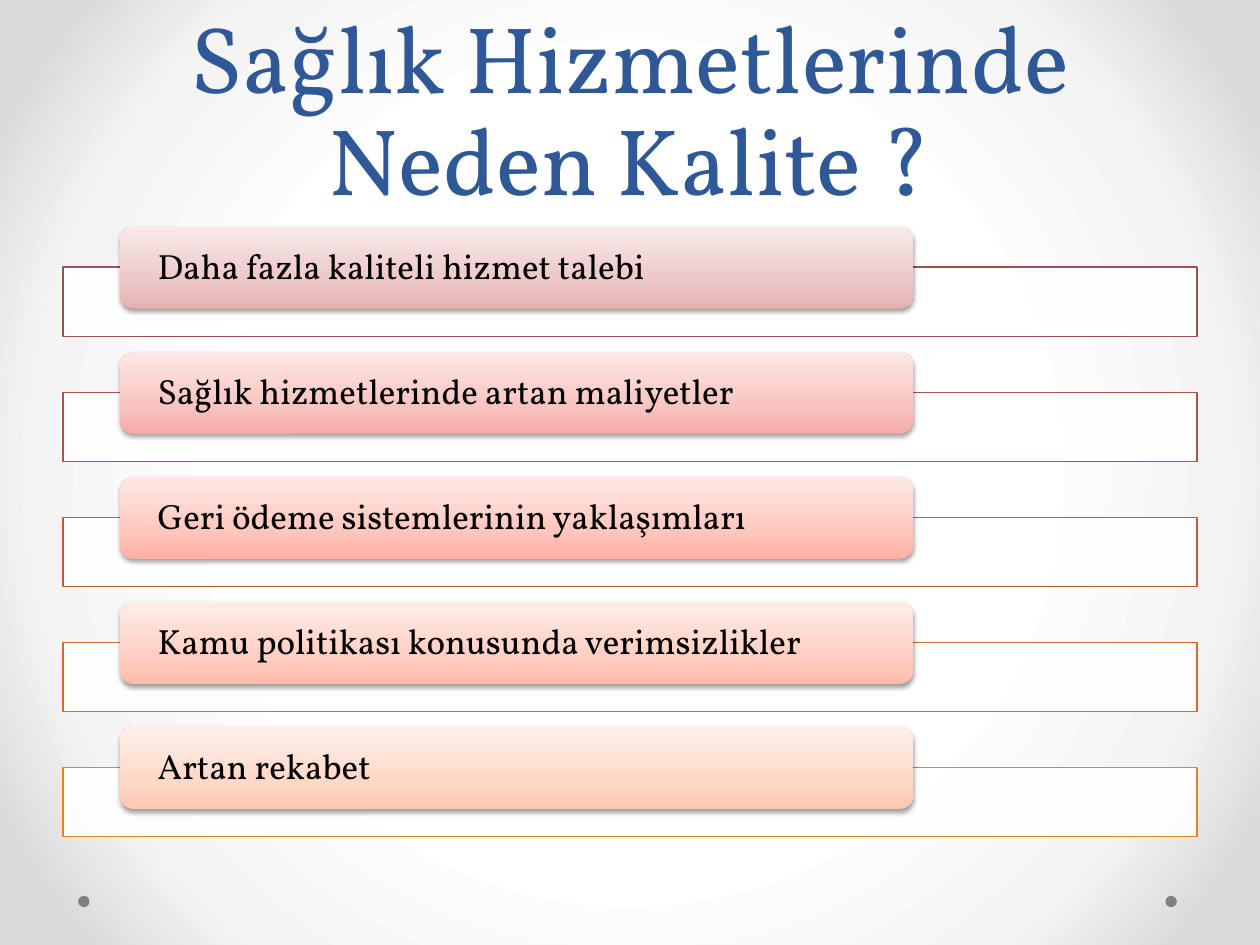
from dataclasses import dataclass

from lxml import etree
from pptx import Presentation
from pptx.dml.color import RGBColor
from pptx.enum import shapes, text
from pptx.oxml.ns import qn
from pptx.util import Inches, Pt

FONT = "Vollkorn"
COLORS = {
    "title": "2F5897",
    "body": "000000",
    "panel": "FFFFFF",
    "dot": "808080",
    "shadow": "000000",
}
BACKGROUND = [(50, "FFFFFF"), (76, "F4F4F4"), (92, "DADADA")]
TOP, PITCH = 1.8, 3.97 / 4


@dataclass
class Reason:
    label: str
    line: str
    gradient: tuple[str, str, str]


REASONS = [
    Reason("Daha fazla kaliteli hizmet talebi", "9C5252", ("E8B0B0", "EDC8C8", "F9E9E9")),
    Reason("Sağlık hizmetlerinde artan maliyetler", "AF5345", ("F7ABA6", "F8C5C1", "FDE8E6")),
    Reason("Geri ödeme sistemlerinin yaklaşımları", "C35B38", ("FFB0A4", "FFC7BE", "FFE9E6")),
    Reason("Kamu politikası konusunda verimsizlikler", "D66B2B", ("FFBCAB", "FFCFC3", "FFEDE8")),
    Reason("Artan rekabet", "E68422", ("FFC9B1", "FFD8C8", "FFF0EA")),
]


def rgb(value: str) -> RGBColor:
    return RGBColor.from_string(value)


def add(parent, tag: str, **attrs):
    return etree.SubElement(parent, qn(tag), {k: str(v) for k, v in attrs.items()})


def set_gradient(fill, owner, stops: list[tuple[int, str]], angle: int | None = None) -> None:
    """Linear gradient at an angle in degrees, or circular from the centre."""
    fill.gradient()
    grad = owner.find(".//" + qn("a:gradFill"))
    for child in list(grad):
        grad.remove(child)
    gs_list = add(grad, "a:gsLst")
    for pos, color in stops:
        add(add(gs_list, "a:gs", pos=pos * 1000), "a:srgbClr", val=color)
    if angle is None:
        circle = add(grad, "a:path", path="circle")
        add(circle, "a:fillToRect", l=50000, t=50000, r=50000, b=50000)
    else:
        add(grad, "a:lin", ang=angle * 60000, scaled=0)


def add_shape(s, kind, left: float, top: float, width: float, height: float):
    sp = s.shapes.add_shape(kind, Inches(left), Inches(top), Inches(width), Inches(height))
    sp.shadow.inherit = False
    sp.line.fill.background()
    return sp


def set_text(tf, content: str, size: int, color: str, align, spacing) -> None:
    tf.word_wrap = True
    p = tf.paragraphs[0]
    p.text = content
    p.alignment = align
    p.line_spacing = spacing
    p.font.name = FONT
    p.font.size = Pt(size)
    p.font.color.rgb = rgb(color)


def add_reason(s, reason: Reason, top: float) -> None:
    # Outlined panel behind the label
    panel = add_shape(s, shapes.MSO_SHAPE.RECTANGLE, 0.5, top + 0.32, 9, 0.55)
    panel.fill.solid()
    panel.fill.fore_color.rgb = rgb(COLORS["panel"])
    add(panel._element.spPr.find(qn("a:solidFill"))[0], "a:alpha", val=90000)
    panel.line.color.rgb = rgb(reason.line)
    panel.line.width = Pt(0.75)

    # Rounded label with a soft shadow
    label = add_shape(s, shapes.MSO_SHAPE.ROUNDED_RECTANGLE, 0.95, top, 6.3, 0.65)
    set_gradient(label.fill, label._element, list(zip((0, 35, 100), reason.gradient)), 270)
    shadow = add(label._element.spPr.find(qn("a:effectLst")), "a:outerShdw",
                 blurRad=Pt(3.1), dist=Pt(1.6), dir=90 * 60000, rotWithShape=0)
    add(add(shadow, "a:srgbClr", val=COLORS["shadow"]), "a:alpha", val=38000)
    tf = label.text_frame
    tf.margin_left = tf.margin_right = Inches(0.27)
    tf.margin_top = tf.margin_bottom = 0
    tf.vertical_anchor = text.MSO_ANCHOR.MIDDLE
    set_text(tf, reason.label, 20, COLORS["body"], text.PP_ALIGN.LEFT, 0.9)


def main() -> None:
    prs = Presentation()
    prs.slide_width, prs.slide_height = Inches(10), Inches(7.5)
    s = prs.slides.add_slide(prs.slide_layouts[6])
    set_gradient(s.background.fill, s._element, BACKGROUND)

    # Corner dots
    for left in (9.25, 0.62):
        dot = add_shape(s, shapes.MSO_SHAPE.OVAL, left, 7.11, 0.09, 0.09)
        dot.fill.solid()
        dot.fill.fore_color.rgb = rgb(COLORS["dot"])

    # Title
    tf = s.shapes.add_textbox(Inches(0.5), 0, Inches(9), Inches(1.75)).text_frame
    tf.vertical_anchor = text.MSO_ANCHOR.BOTTOM
    set_text(tf, "Sağlık Hizmetlerinde Neden Kalite ?", 54, COLORS["title"],
             text.PP_ALIGN.CENTER, Pt(58))

    # Reasons
    for i, reason in enumerate(REASONS):
        add_reason(s, reason, TOP + i * PITCH)

    prs.save("out.pptx")


if __name__ == "__main__":
    main()
